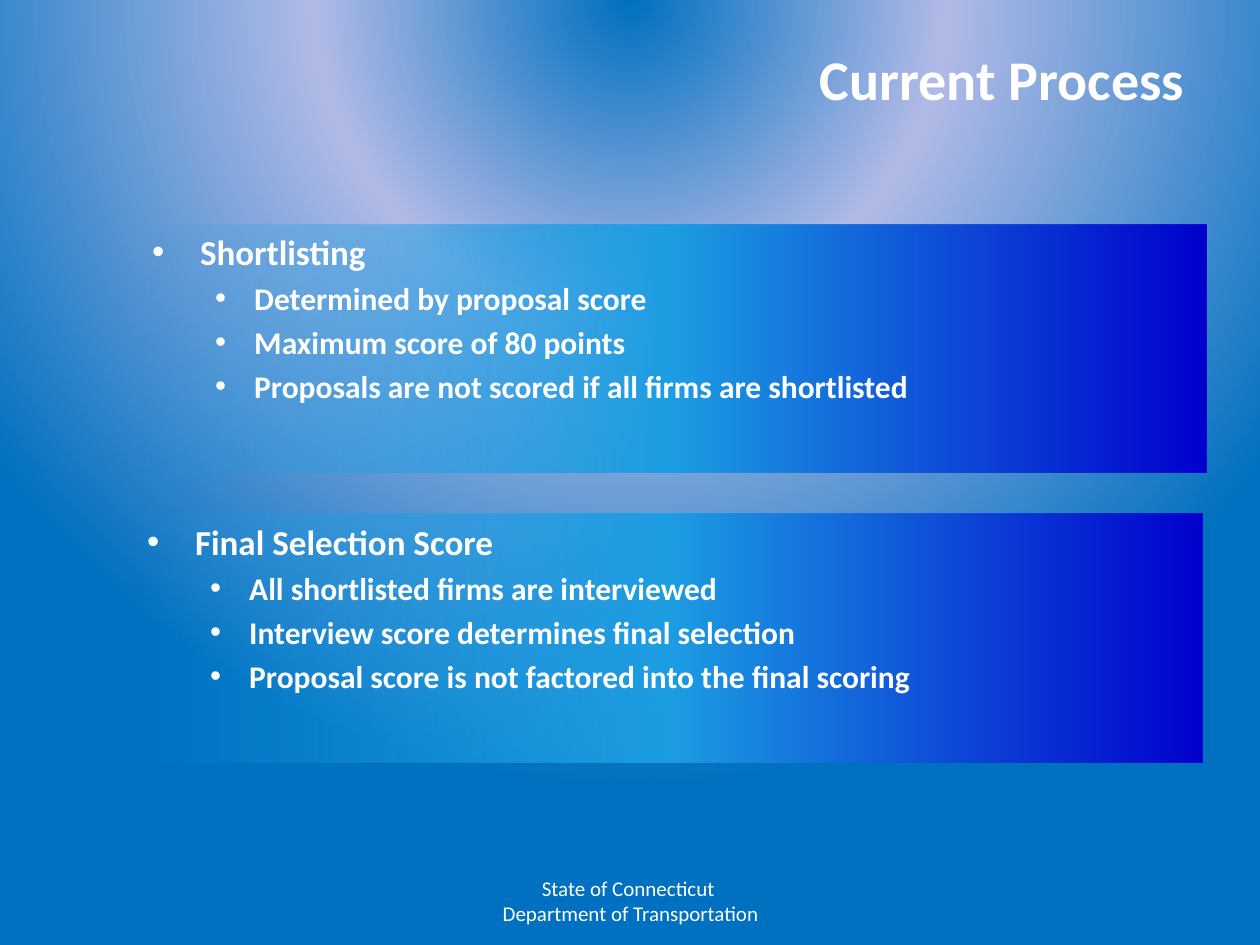
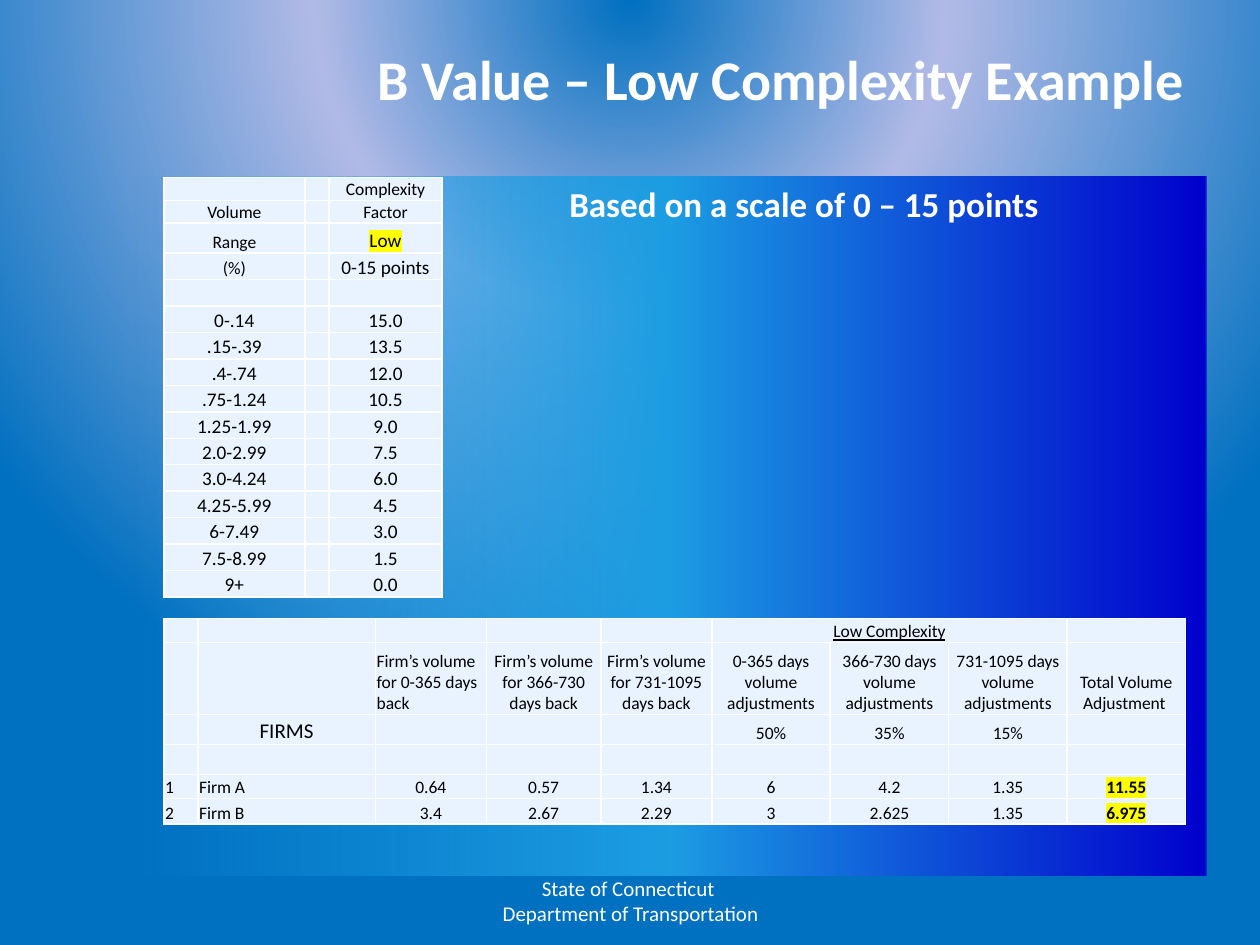
from lxml import etree
from pptx import Presentation
from pptx.dml.color import RGBColor
from pptx.enum.shapes import MSO_SHAPE
from pptx.enum.text import MSO_ANCHOR, MSO_AUTO_SIZE, PP_ALIGN
from pptx.oxml import parse_xml
from pptx.oxml.ns import nsdecls, qn
from pptx.util import Inches, Pt

FONT = "Calibri"
WHITE, BLACK, PALE, YELLOW = "FFFFFF", "000000", "E8F3FF", "FFFF00"
NAVY, SKY, BLUE, LILAC = "0000CC", "1C9DE2", "0070C0", "B1BAE6"
FOOTER = "State of Connecticut \vDepartment of Transportation"

SCALE = [
    ("0-.14", "15.0"), (".15-.39", "13.5"), (".4-.74", "12.0"),
    (".75-1.24", "10.5"), ("1.25-1.99", "9.0"), ("2.0-2.99", "7.5"),
    ("3.0-4.24", "6.0"), ("4.25-5.99", "4.5"), ("6-7.49", "3.0"),
    ("7.5-8.99", "1.5"), ("9+", "0.0"),
]
RANGES = [
    ("", "", "Complexity"), ("Volume", "", "Factor"), ("Range", "", "Low"),
    ("(%)", "", "0-15 points"), ("", "", ""),
] + [(span, "", score) for span, score in SCALE]

BACK = [f"Firm’s volume for {days} days back"
        for days in ("0-365", "366-730", "731-1095")]
ADJUST = [f"{days} days volume adjustments"
          for days in ("0-365", "366-730", "731-1095")]
FIRMS = [
    [""] * 5 + ["Low Complexity"] + [""] * 3,
    ["", ""] + BACK + ADJUST + ["Total Volume Adjustment "],
    ["", "FIRMS", "", "", "", "50%", "35%", "15%", ""],
    [""] * 9,
    ["1", "Firm A", "0.64", "0.57", "1.34", "6", "4.2", "1.35", "11.55"],
    ["2", "Firm B", "3.4", "2.67", "2.29", "3", "2.625", "1.35", "6.975"],
]


def rgb(code):
    return RGBColor.from_string(code)


def inches(box):
    return [Inches(value) for value in box]


def style(para, size, color=WHITE, bold=False):
    for run in para.runs:
        font = run.font
        font.name, font.size, font.bold = FONT, Pt(size), bold
        font.color.rgb = rgb(color)


def gradient(stops, shade):
    parts = "".join(
        f'<a:gs pos="{place * 1000}"><a:srgbClr val="{color}">'
        f'<a:alpha val="{alpha * 1000}"/></a:srgbClr></a:gs>'
        for place, color, alpha in stops)
    return parse_xml(f'<a:gradFill {nsdecls("a")} rotWithShape="1">'
                     f'<a:gsLst>{parts}</a:gsLst>{shade}</a:gradFill>')


def swap(fill, node, route, grad):
    fill.solid()
    old = node.xpath(route)[0]
    old.getparent().replace(old, grad)


def backdrop(master):
    shade = ('<a:path path="circle"><a:fillToRect l="50000" t="-80000" '
             'r="50000" b="180000"/></a:path>')
    stops = [(0, BLUE, 100), (40, LILAC, 100), (100, BLUE, 100)]
    swap(master.background.fill, master.element,
         "p:cSld/p:bg/p:bgPr/a:solidFill", gradient(stops, shade))


def place(shape, box):
    shape.left, shape.top, shape.width, shape.height = inches(box)


def frame(deck, title):
    slide = deck.slides.add_slide(deck.slide_layouts[5])
    head = slide.shapes.title
    place(head, (0.5, 0.3, 9, 0.64))
    foot = slide.shapes.add_textbox(*inches((3.42, 6.95, 3.17, 0.4)))
    for shape, words, size, align, bold in (
            (head, title, 32, PP_ALIGN.RIGHT, True),
            (foot, FOOTER, 12, PP_ALIGN.CENTER, False)):
        text = shape.text_frame
        text.word_wrap = True
        text.auto_size = MSO_AUTO_SIZE.NONE
        text.vertical_anchor = MSO_ANCHOR.MIDDLE
        para = text.paragraphs[0]
        para.text = words
        para.alignment = align
        style(para, size, bold=bold)
    return slide


def panel(slide, box):
    shape = slide.shapes.add_shape(MSO_SHAPE.RECTANGLE, *inches(box))
    shape.shadow.inherit = False
    shape.line.fill.background()
    stops = [(0, NAVY, 100), (50, SKY, 100), (100, SKY, 0)]
    swap(shape.fill, shape.element, "p:spPr/a:solidFill",
         gradient(stops, '<a:lin ang="10800000" scaled="0"/>'))
    text = shape.text_frame
    text.word_wrap = True
    text.vertical_anchor = MSO_ANCHOR.TOP
    text.paragraphs[0].alignment = PP_ALIGN.LEFT
    return text


def indent(para, left, hang=0):
    props = para._p.get_or_add_pPr()
    props.set("marL", str(Inches(left)))
    props.set("indent", str(-Inches(hang)))
    return props


def points(slide, box, lines):
    text = panel(slide, box)
    for row, line in enumerate(lines):
        para = text.add_paragraph() if row else text.paragraphs[0]
        para.text = line
        para.alignment = PP_ALIGN.LEFT
        left, hang, size = (0.81, 0.31, 18) if row else (0.38, 0.38, 20)
        props = indent(para, left, hang)
        etree.SubElement(props, qn("a:buFont")).set("typeface", "Arial")
        etree.SubElement(props, qn("a:buChar")).set("char", "•")
        if row:
            para.level = 1
            para.space_before = Pt(3.6)
        style(para, size, bold=True)


def mark(para):
    for run in para.runs:
        fill = run._r.rPr.find(qn("a:solidFill"))
        fill.addnext(parse_xml(f'<a:highlight {nsdecls("a")}>'
                               f'<a:srgbClr val="{YELLOW}"/></a:highlight>'))


def border(cell):
    props = cell._tc.get_or_add_tcPr()
    for index, side in enumerate(("lnL", "lnR", "lnT", "lnB")):
        props.insert(index, parse_xml(
            f'<a:{side} {nsdecls("a")} w="12700"><a:solidFill>'
            f'<a:srgbClr val="{WHITE}"/></a:solidFill></a:{side}>'))


def fill_cell(cell, words, size, left):
    cell.fill.solid()
    cell.fill.fore_color.rgb = rgb(PALE)
    border(cell)
    cell.margin_left = cell.margin_right = cell.margin_top = Inches(0.01)
    cell.margin_bottom = 0
    cell.vertical_anchor = MSO_ANCHOR.BOTTOM
    para = cell.text_frame.paragraphs[0]
    para.alignment = PP_ALIGN.LEFT if left else PP_ALIGN.CENTER
    if words:
        para.text = words
        style(para, size, BLACK)
    else:
        etree.SubElement(para._p, qn("a:endParaRPr")).set("sz", str(size * 100))


def grid(slide, spot, cols, rows, data, sizes, lefts=()):
    box = (*spot, sum(cols), sum(rows))
    table = slide.shapes.add_table(len(rows), len(cols), *inches(box)).table
    table.first_row = table.horz_banding = False
    for col, width in zip(table.columns, cols):
        col.width = Inches(width)
    for r, (height, line) in enumerate(zip(rows, data)):
        table.rows[r].height = Inches(height)
        for c, words in enumerate(line):
            fill_cell(table.cell(r, c), words, sizes.get((r, c), 10),
                      (r, c) in lefts)
    return table


def first(table, r, c):
    return table.cell(r, c).text_frame.paragraphs[0]


def ranges(slide, spot):
    sizes = {(r, c): 11 for r in range(4, len(RANGES)) for c in range(3)}
    sizes.update({(2, 2): 11, (3, 2): 11})
    rows = [0.18, 0.18, 0.24] + [0.21] * 13
    table = grid(slide, spot, [1.12, 0.19, 0.9], rows, RANGES, sizes)
    mark(first(table, 2, 2))


def firms(slide, spot):
    cols = [0.27, 1.41, 0.88, 0.91, 0.88] + [0.94] * 4
    rows = [0.19, 0.57, 0.24, 0.24, 0.19, 0.2]
    lefts = {(1, 2), (4, 0), (4, 1), (5, 0), (5, 1)}
    table = grid(slide, spot, cols, rows, FIRMS, {(2, 1): 12}, lefts)
    table.cell(0, 5).merge(table.cell(0, 7))
    first(table, 0, 5).runs[0].font.underline = True
    for r in (4, 5):
        total = first(table, r, 8)
        total.runs[0].font.bold = True
        mark(total)


def process(deck):
    slide = frame(deck, "Current Process")
    points(slide, (1.11, 1.78, 8.47, 1.97), [
        "Shortlisting",
        "Determined by proposal score",
        "Maximum score of 80 points",
        "Proposals are not scored if all firms are shortlisted"])
    points(slide, (1.07, 4.08, 8.47, 1.97), [
        "Final Selection Score",
        "All shortlisted firms are interviewed",
        "Interview score determines final selection",
        "Proposal score is not factored into the final scoring"])


def example(deck):
    slide = frame(deck, "B Value – Low Complexity Example")
    para = panel(slide, (1.05, 1.4, 8.53, 5.55)).paragraphs[0]
    para.text = "Based on a scale of 0 – 15 points"
    indent(para, 3.37)
    style(para, 20, bold=True)
    firms(slide, (1.3, 4.91))
    ranges(slide, (1.3, 1.41))


def main():
    deck = Presentation()
    deck.slide_width, deck.slide_height = Inches(10), Inches(7.5)
    backdrop(deck.slide_master)
    process(deck)
    example(deck)
    deck.save("out.pptx")


if __name__ == "__main__":
    main()
